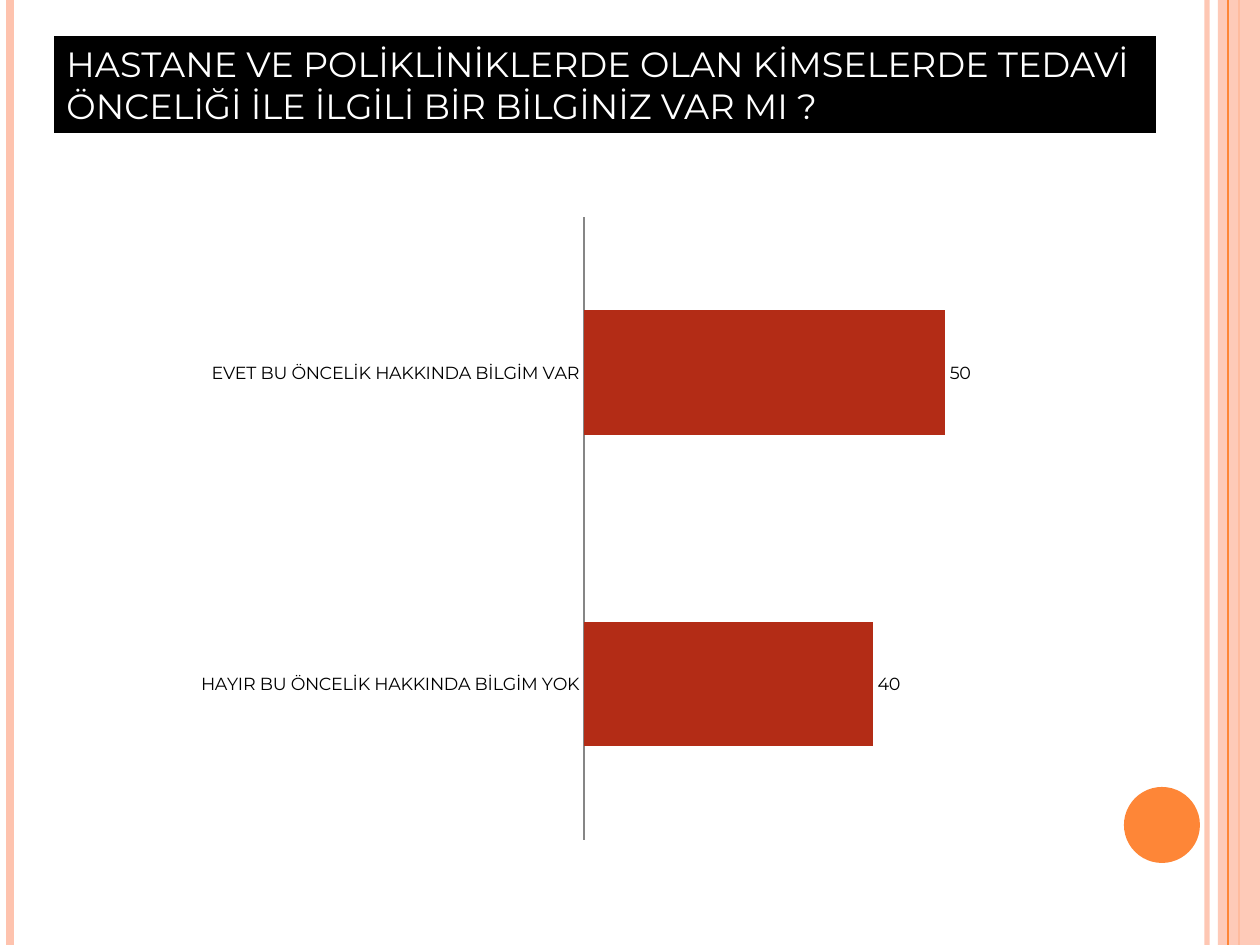
import dataclasses

import lxml.etree
import pptx
import pptx.chart.data
import pptx.dml.color
import pptx.enum.chart
import pptx.enum.shapes
import pptx.enum.text
import pptx.oxml.ns
import pptx.util

EMU_PER_PX = 914400 / 126


@dataclasses.dataclass(frozen=True)
class Theme:
    """Colours, font and type sizes of the slide."""
    peach: str = "FEC3AE"
    orange: str = "FE8637"
    brick: str = "B32C16"
    black: str = "000000"
    white: str = "FFFFFF"
    axis: str = "868686"
    font: str = "Montserrat"
    title_size: int = 20
    chart_size: int = 10


THEME = Theme()


def px(length):
    """Turn px into EMU."""
    return pptx.util.Emu(round(length * EMU_PER_PX))


def rgb(colour):
    """Turn a hex string into a colour."""
    return pptx.dml.color.RGBColor.from_string(colour)


def set_opacity(element, percent):
    """Make the first colour found in the element partly transparent."""
    colour = next(element.iter(pptx.oxml.ns.qn("a:srgbClr")))
    alpha = lxml.etree.SubElement(colour, pptx.oxml.ns.qn("a:alpha"))
    alpha.set("val", str(percent * 1000))


def style_font(font, size, colour):
    """Give a font the theme typeface, a size and a colour."""
    font.name = THEME.font
    font.size = pptx.util.Pt(size)
    font.color.rgb = rgb(colour)


def write_text(frame, text, size, colour, align=pptx.enum.text.PP_ALIGN.LEFT,
               anchor=pptx.enum.text.MSO_ANCHOR.TOP):
    """Write one formatted paragraph into a text frame."""
    frame.word_wrap = True
    frame.vertical_anchor = anchor
    paragraph = frame.paragraphs[0]
    paragraph.alignment = align
    run = paragraph.add_run()
    run.text = text
    style_font(run.font, size, colour)


def add_block(slide, kind, box, colour):
    """Add a flat filled shape without outline."""
    block = slide.shapes.add_shape(kind, *map(px, box))
    block.shadow.inherit = False
    block.fill.solid()
    block.fill.fore_color.rgb = rgb(colour)
    block.line.fill.background()
    return block


def add_stripe(slide, x, top, height, colour, width):
    """Add a vertical line running down from top."""
    stripe = slide.shapes.add_connector(
        pptx.enum.shapes.MSO_CONNECTOR.STRAIGHT,
        px(x), px(top), px(x), px(top + height))
    stripe.line.color.rgb = rgb(colour)
    stripe.line.width = pptx.util.Pt(width)
    properties = stripe.element.spPr
    lxml.etree.SubElement(properties, pptx.oxml.ns.qn("a:effectLst"))
    return stripe


def add_border(slide, left, top, width, height):
    """Draw the side stripes, the right band and the orange dot."""
    right = left + width
    shapes = pptx.enum.shapes.MSO_SHAPE
    inner = add_stripe(slide, right - 53, top, height, THEME.peach, 3)
    set_opacity(inner.element.spPr, 93)
    add_stripe(slide, left + 10, top, height, THEME.peach, 4.5)
    add_stripe(slide, right - 21, top, height, THEME.orange, 1.5)
    band = add_block(slide, shapes.RECTANGLE, (right - 42, top, 42, height),
                     THEME.peach)
    set_opacity(band.element.spPr, 87)
    add_stripe(slide, right - 32, top, height, THEME.orange, 0.75)
    add_block(slide, shapes.OVAL, (right - 136, top + height - 158, 76, 76),
              THEME.orange)


def add_title(slide, left, top, width, height):
    """Draw the black title bar with the survey question."""
    bar = add_block(slide, pptx.enum.shapes.MSO_SHAPE.RECTANGLE,
                    (left, top, width, height), THEME.black)
    write_text(bar.text_frame,
               "HASTANE VE POLİKLİNİKLERDE OLAN KİMSELERDE TEDAVİ ÖNCELİĞİ "
               "İLE İLGİLİ BİR BİLGİNİZ VAR MI ?",
               size=THEME.title_size, colour=THEME.white)


def add_answers(slide, left, top, width, height):
    """Draw the bar chart of the answers."""
    answers = pptx.chart.data.CategoryChartData()
    answers.categories = ["HAYIR BU ÖNCELİK HAKKINDA BİLGİM YOK",
                          "EVET BU ÖNCELİK HAKKINDA BİLGİM VAR"]
    answers.add_series("Series 1", (40, 50))
    chart = slide.shapes.add_chart(
        pptx.enum.chart.XL_CHART_TYPE.BAR_CLUSTERED,
        px(left), px(top), px(width), px(height), answers).chart
    chart.has_legend = False
    chart.has_title = False
    style_font(chart.font, THEME.chart_size, THEME.black)

    category_axis = chart.category_axis
    category_axis.major_tick_mark = pptx.enum.chart.XL_TICK_MARK.NONE
    category_axis.format.line.color.rgb = rgb(THEME.axis)
    category_axis.format.line.width = pptx.util.Pt(0.75)
    value_axis = chart.value_axis
    value_axis.minimum_scale, value_axis.maximum_scale = 0, 60
    value_axis.has_major_gridlines = False
    value_axis.visible = False

    plot = chart.plots[0]
    plot.vary_by_categories = False
    plot.gap_width = 150
    plot.overlap = -25
    plot.has_data_labels = True
    plot.data_labels.show_value = True
    plot.data_labels.position = pptx.enum.chart.XL_LABEL_POSITION.OUTSIDE_END
    bars = plot.series[0].format.fill
    bars.solid()
    bars.fore_color.rgb = rgb(THEME.brick)


def main():
    """Build and save the slide."""
    deck = pptx.Presentation()
    deck.slide_width, deck.slide_height = px(1260), px(945)
    slide = deck.slides.add_slide(deck.slide_layouts[6])
    add_border(slide, 0, 0, 1260, 945)
    add_title(slide, 54, 36, 1102, 97)
    add_answers(slide, 184, 204, 850, 649)
    deck.save("out.pptx")


if __name__ == "__main__":
    main()
